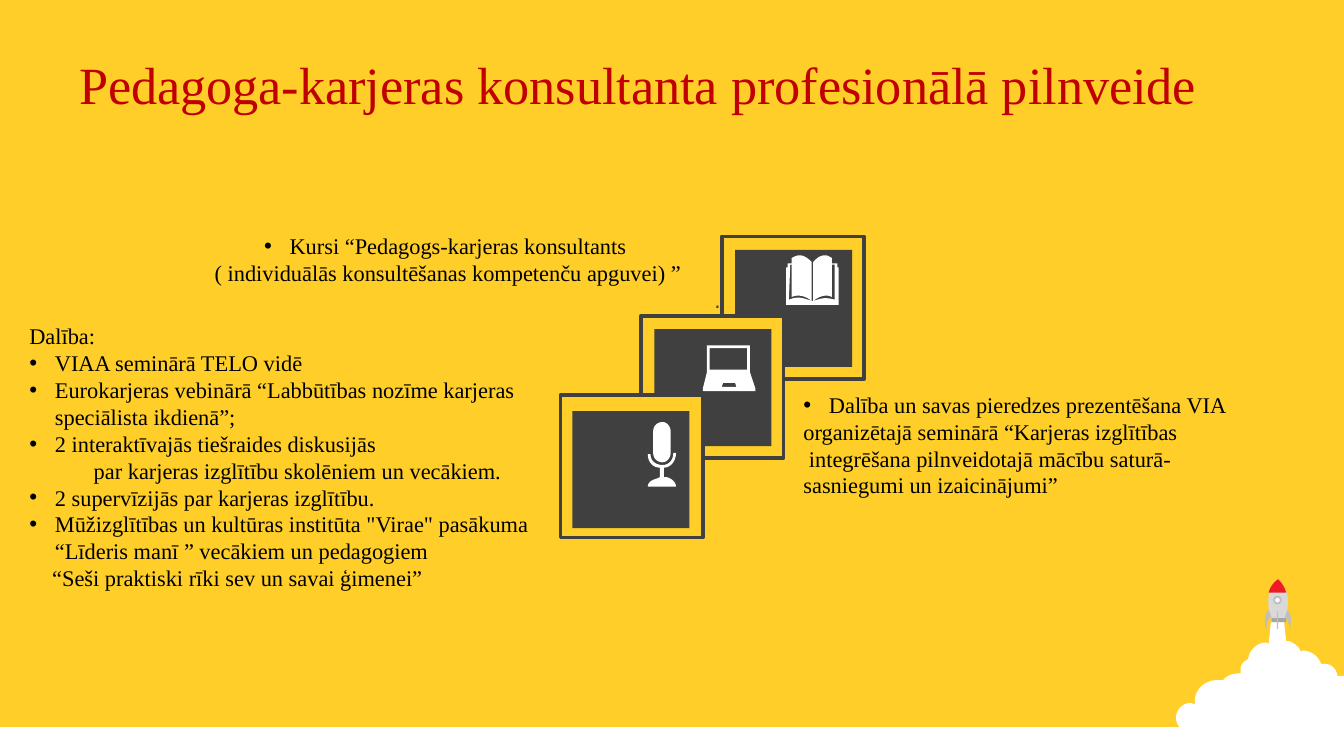
from lxml import etree
from pptx import Presentation
from pptx.dml.color import RGBColor
from pptx.enum.shapes import MSO_SHAPE
from pptx.enum.text import MSO_ANCHOR, MSO_AUTO_SIZE, PP_ALIGN
from pptx.oxml.ns import qn
from pptx.util import Inches, Pt

RECT, OVAL = MSO_SHAPE.RECTANGLE, MSO_SHAPE.OVAL
LEFT, CENTER, RIGHT = PP_ALIGN.LEFT, PP_ALIGN.CENTER, PP_ALIGN.RIGHT
MIDDLE, TOP = MSO_ANCHOR.MIDDLE, MSO_ANCHOR.TOP
GROW, FIXED = MSO_AUTO_SIZE.SHAPE_TO_FIT_TEXT, MSO_AUTO_SIZE.NONE

WIDTH = 10
HEIGHT = WIDTH * 9 / 16
BAND_TOP = 5.41
SERIF, SANS = "Times New Roman", "Arial"
COLORS = {
    "yellow": "FFCE29", "dark": "404040", "white": "FFFFFF", "title": "C00000",
    "text": "000000", "body": "D9D9D9", "skirt": "A6A6A6", "nose": "ED1C24",
    "trim": "BFBFBF",
}

TITLE = "Pedagoga-karjeras konsultanta profesionālā pilnveide"
PLAIN = {}
BULLET = {"bullet": True}
CENTERED = {"align": CENTER}

TEXTS = [
    ((0.12, 2.35, 3.98, 2.32), [
        ("Dalība:", PLAIN),
        ("VIAA seminārā TELO vidē", BULLET),
        ("Eurokarjeras vebinārā “Labbūtības nozīme karjeras speciālista ikdienā”;", BULLET),
        ("2 interaktīvajās tiešraides diskusijās", BULLET),
        ("par karjeras izglītību skolēniem un vecākiem.", {"align": CENTER, "left": 0.21}),
        ("2 supervīzijās par karjeras izglītību.", BULLET),
        ('Mūžizglītības un kultūras institūta "Virae" pasākuma '
         "“Līderis manī ” vecākiem un pedagogiem", BULLET),
        ("“Seši praktiski rīki sev un savai ģimenei”", {"left": 0.17}),
    ]),
    ((5.88, 2.86, 3.5, 0.91), [
        ("Dalība un savas pieredzes prezentēšana VIA", BULLET),
        ("organizētajā seminārā “Karjeras izglītības", PLAIN),
        (" integrēšana pilnveidotajā mācību saturā-", PLAIN),
        ("sasniegumi un izaicinājumi”", PLAIN),
    ]),
    ((0.98, 1.68, 4.71, 0.71), [
        ("Kursi “Pedagogs-karjeras konsultants ", {"bullet": True, "align": CENTER}),
        ("( individuālās konsultēšanas kompetenču apguvei) ”", CENTERED),
        (".", {"align": RIGHT, "right": 0.23, "font": SANS, "color": "dark"}),
    ]),
]

CLOUD = """M 9.46 4.59 L 9.55 4.59 L 9.57 4.77 L 9.59 4.77
C 9.62 4.78 9.65 4.8 9.67 4.83 L 9.68 4.85 L 9.69 4.84
C 9.75 4.84 9.81 4.88 9.83 4.94 L 9.86 4.94 C 9.9 4.94 9.94 4.97 9.95 5.02
L 9.95 5.03 L 10 5.03 L 10 5.6 L 9.34 5.61 L 8.93 5.45 L 8.86 5.45
C 8.8 5.45 8.75 5.4 8.75 5.34 C 8.75 5.28 8.8 5.23 8.86 5.23
L 8.89 5.24 L 8.89 5.22 C 8.89 5.13 8.96 5.06 9.06 5.06 L 9.1 5.06 L 9.11 5.05
C 9.14 5.02 9.18 5.01 9.23 5.01 L 9.23 4.98 C 9.23 4.95 9.25 4.92 9.28 4.91
L 9.29 4.89 C 9.3 4.83 9.36 4.78 9.42 4.78 L 9.44 4.79 Z"""
HULL = "M 9.46 4.62 C 9.44 4.53 9.4 4.4 9.51 4.31 C 9.62 4.41 9.58 4.54 9.56 4.62 Z"
NOSE = """M 9.51 4.31 C 9.54 4.34 9.56 4.37 9.57 4.41 L 9.44 4.41
C 9.45 4.37 9.47 4.34 9.51 4.31 Z"""
FINS = [
    "M 9.44 4.54 L 9.46 4.59 C 9.42 4.61 9.43 4.66 9.42 4.68 C 9.41 4.65 9.4 4.57 9.44 4.54 Z",
    "M 9.58 4.54 L 9.56 4.59 C 9.59 4.61 9.59 4.66 9.6 4.68 C 9.6 4.65 9.62 4.57 9.58 4.54 Z",
]
BOOK = """M 6.04 2.24 L 6.05 2.24 C 6.11 2.22 6.14 2.21 6.21 2.23
L 6.21 1.97 L 6.19 1.97 L 6.19 2.21 C 6.15 2.19 6.1 2.2 6.05 2.24 L 6.05 1.95
C 6.08 1.92 6.1 1.9 6.14 1.9 C 6.16 1.9 6.17 1.91 6.19 1.92 L 6.19 1.96
L 6.23 1.96 L 6.23 1.99 L 6.24 1.99 L 6.24 2.27 L 5.85 2.27 L 5.85 1.99
L 5.86 1.99 L 5.86 1.96 L 5.89 1.96 L 5.89 1.92 C 5.91 1.91 5.93 1.9 5.95 1.9
C 5.98 1.9 6.01 1.92 6.04 1.95 L 6.04 2.24 C 5.99 2.2 5.94 2.19 5.89 2.21
L 5.89 1.97 L 5.88 1.97 L 5.87 2.23 C 5.94 2.2 5.98 2.22 6.04 2.24 Z"""
LAPTOP = """M 5.38 2.85 L 5.37 2.88 L 5.48 2.88 L 5.47 2.85 Z
M 5.28 2.59 L 5.28 2.75 L 5.56 2.75 L 5.56 2.59 Z
M 5.26 2.57 L 5.58 2.57 L 5.58 2.77 L 5.62 2.89 L 5.62 2.91 L 5.23 2.91
L 5.23 2.89 L 5.26 2.77 Z"""
MICROPHONE = """M 5.03 3.37 C 5.03 3.43 4.99 3.48 4.94 3.48 L 4.94 3.55 L 4.96 3.55
C 5 3.56 5.03 3.59 5.03 3.62 L 4.82 3.62 C 4.82 3.59 4.85 3.57 4.89 3.56
L 4.91 3.55 L 4.91 3.48 C 4.86 3.48 4.82 3.44 4.82 3.38 L 4.84 3.38
C 4.84 3.43 4.88 3.46 4.93 3.46 C 4.98 3.46 5.01 3.42 5.01 3.37 Z
M 4.93 3.14 C 4.96 3.14 4.99 3.17 4.99 3.21 L 4.99 3.37
C 4.99 3.41 4.96 3.44 4.93 3.44 C 4.89 3.44 4.86 3.41 4.86 3.37 L 4.86 3.21
C 4.86 3.17 4.89 3.14 4.93 3.14 Z"""

FRAME_START, FRAME_STEP = (5.37, 1.76), (-0.6, 0.59)
FRAME_SIZE, TILE_SIZE = 1.06, 0.87
TILE_INSETS = [(0.1, 0.1), (0.1, 0.1), (0.09, 0.12)]
CURVE_STEPS = 8


def rgb(name):
    return RGBColor.from_string(COLORS[name])


def paint(shape, fill, line=None, weight=1):
    shape.shadow.inherit = False
    shape.fill.solid()
    shape.fill.fore_color.rgb = rgb(fill)
    if line:
        shape.line.color.rgb = rgb(line)
        shape.line.width = Pt(weight)
    else:
        shape.line.fill.background()


def add_preset(page, kind, area, fill, line=None, weight=1):
    shape = page.shapes.add_shape(kind, *map(Inches, area))
    paint(shape, fill, line, weight)


def curve_points(start, first, second, end):
    for step in range(1, CURVE_STEPS + 1):
        t = step / CURVE_STEPS
        weights = ((1 - t) ** 3, 3 * t * (1 - t) ** 2, 3 * t * t * (1 - t), t ** 3)
        yield tuple(sum(w * p[axis] for w, p in zip(weights, (start, first, second, end)))
                    for axis in (0, 1))


def contours(outline):
    for contour in outline.split("M")[1:]:
        tokens = iter(contour.replace("Z", "").split())
        points = [(float(next(tokens)), float(next(tokens)))]
        for command in tokens:
            count = 3 if command == "C" else 1
            ends = [(float(next(tokens)), float(next(tokens))) for _ in range(count)]
            points.extend(curve_points(points[-1], *ends) if count == 3 else ends)
        yield [(Inches(x), Inches(y)) for x, y in points]


def add_outline(page, outline, fill):
    first, *others = contours(outline)
    builder = page.shapes.build_freeform(*first[0])
    builder.add_line_segments(first[1:])
    for points in others:
        builder.move_to(*points[0])
        builder.add_line_segments(points[1:])
    paint(builder.convert_to_shape(), fill)


def add_text(page, area, lines, size=12, color="text", anchor=TOP, fit=GROW):
    box = page.shapes.add_textbox(*map(Inches, area))
    frame = box.text_frame
    frame.word_wrap, frame.vertical_anchor, frame.auto_size = True, anchor, fit
    for index, (text, style) in enumerate(lines):
        para = frame.paragraphs[0] if index == 0 else frame.add_paragraph()
        para.text = text
        para.alignment = style.get("align", LEFT)
        para.font.size = Pt(size)
        para.font.name = style.get("font", SERIF)
        para.font.color.rgb = rgb(style.get("color", color))
        properties = para._p.get_or_add_pPr()
        if style.get("bullet"):
            properties.set("marL", str(Inches(0.19)))
            properties.set("indent", str(-Inches(0.19)))
            bullet_font = etree.Element(qn("a:buFont"), typeface=SANS)
            bullet = etree.Element(qn("a:buChar"), char="•")
            properties.insert(0, bullet_font)
            properties.insert(1, bullet)
        else:
            properties.set("marL", str(Inches(style.get("left", 0))))
            properties.set("marR", str(Inches(style.get("right", 0))))


def main():
    deck = Presentation()
    deck.slide_width, deck.slide_height = Inches(WIDTH), Inches(HEIGHT)
    page = deck.slides.add_slide(deck.slide_layouts[6])
    page.background.fill.solid()
    page.background.fill.fore_color.rgb = rgb("yellow")

    add_preset(page, RECT, (0, BAND_TOP, WIDTH, HEIGHT - BAND_TOP), "white")
    add_outline(page, CLOUD, "white")
    add_outline(page, HULL, "body")
    add_preset(page, RECT, (9.46, 4.6, 0.11, 0.03), "skirt")
    add_outline(page, NOSE, "nose")
    add_preset(page, OVAL, (9.48, 4.44, 0.05, 0.05), "white", "trim")
    add_preset(page, RECT, (9.5, 4.55, 0.01, 0.13), "trim")
    for fin in FINS:
        add_outline(page, fin, "trim")

    for index, (inset_x, inset_y) in enumerate(TILE_INSETS):
        x, y = (start + index * step for start, step in zip(FRAME_START, FRAME_STEP))
        add_preset(page, RECT, (x, y, FRAME_SIZE, FRAME_SIZE), "yellow", "dark", 2)
        add_preset(page, RECT, (x + inset_x, y + inset_y, TILE_SIZE, TILE_SIZE), "dark")

    add_text(page, (0, 0.14, 9.49, 0.96), [(TITLE, CENTERED)], 28, "title", MIDDLE, FIXED)
    for area, lines in TEXTS:
        add_text(page, area, lines)
    for icon in (BOOK, LAPTOP, MICROPHONE):
        add_outline(page, icon, "white")
    deck.save("out.pptx")


if __name__ == "__main__":
    main()
